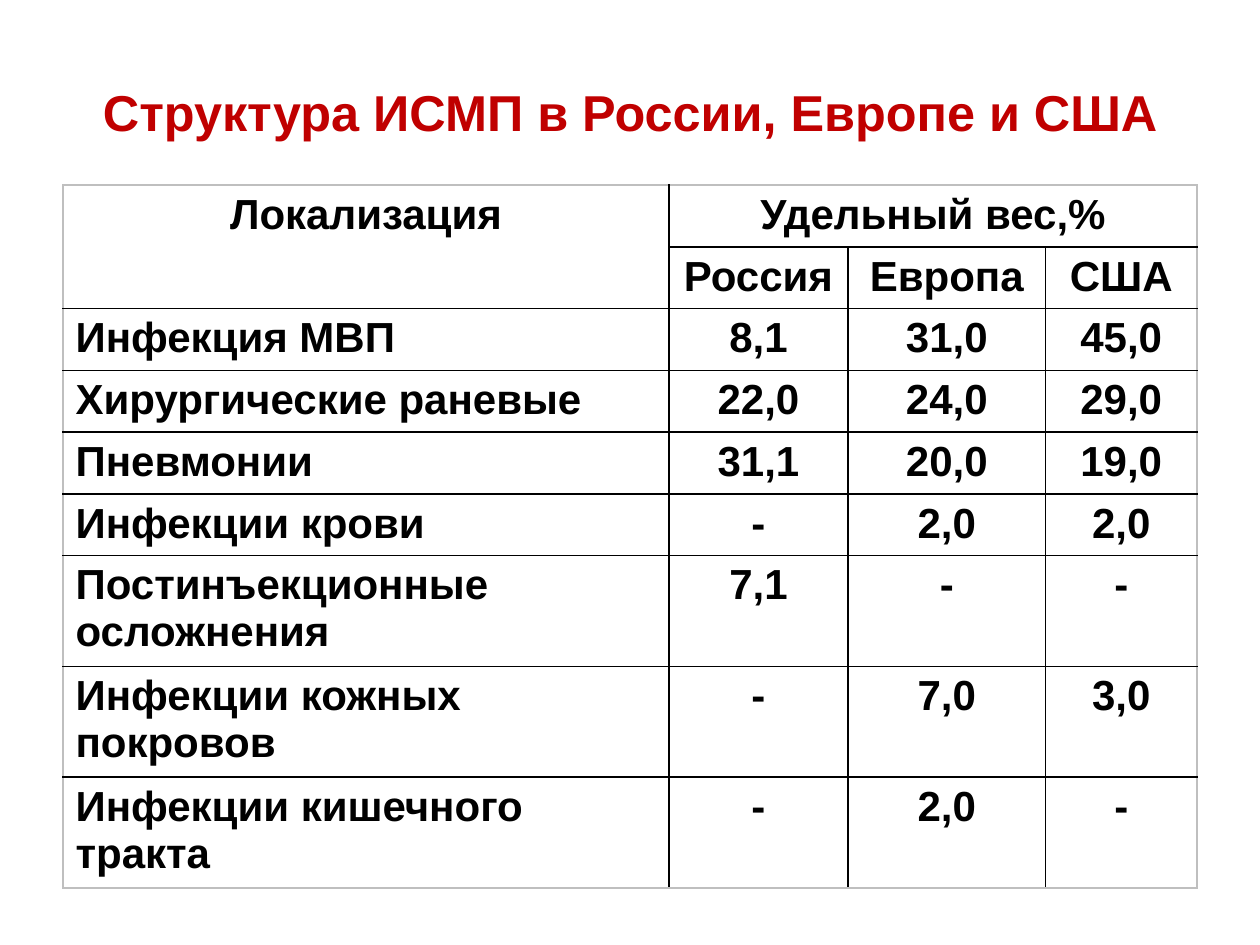
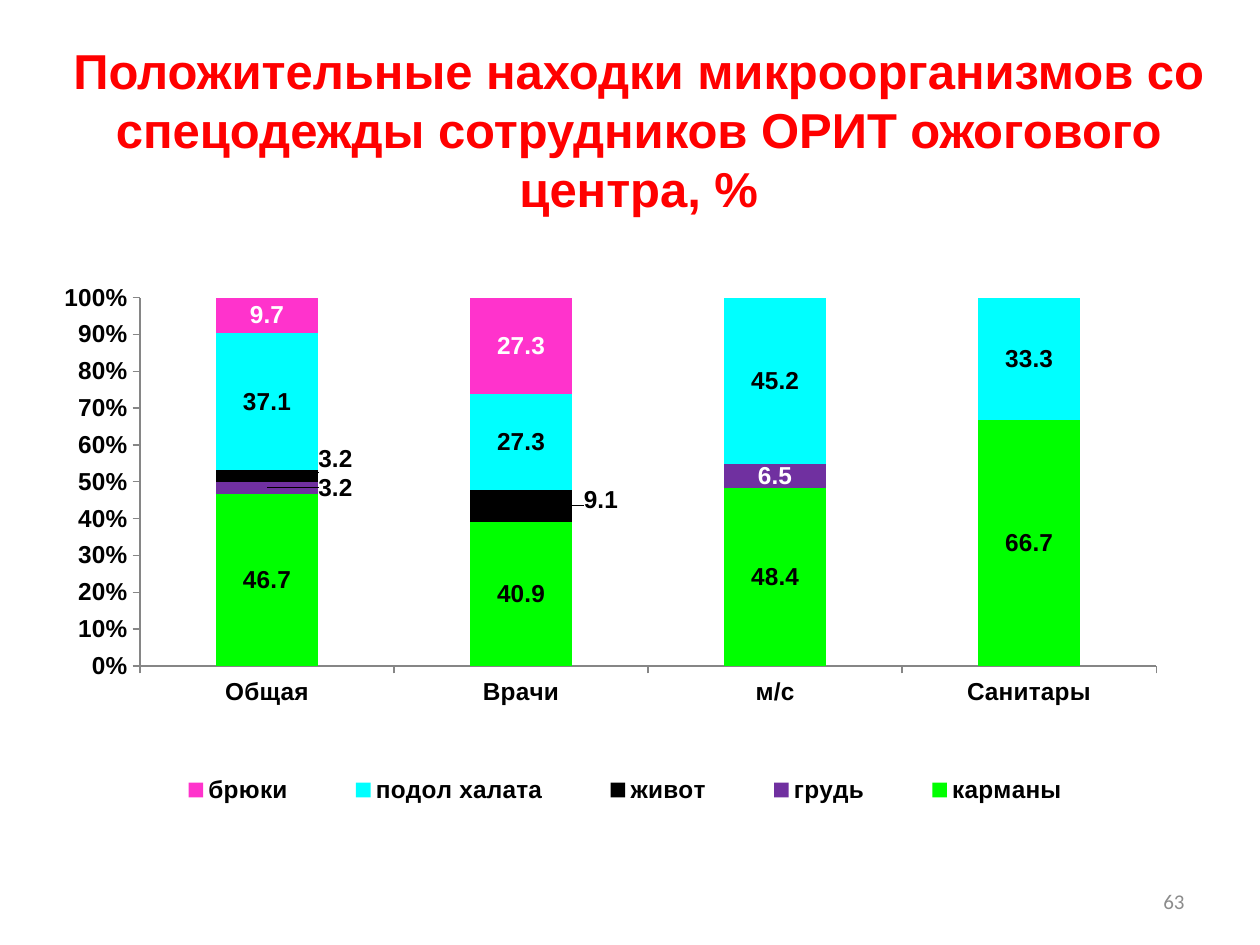
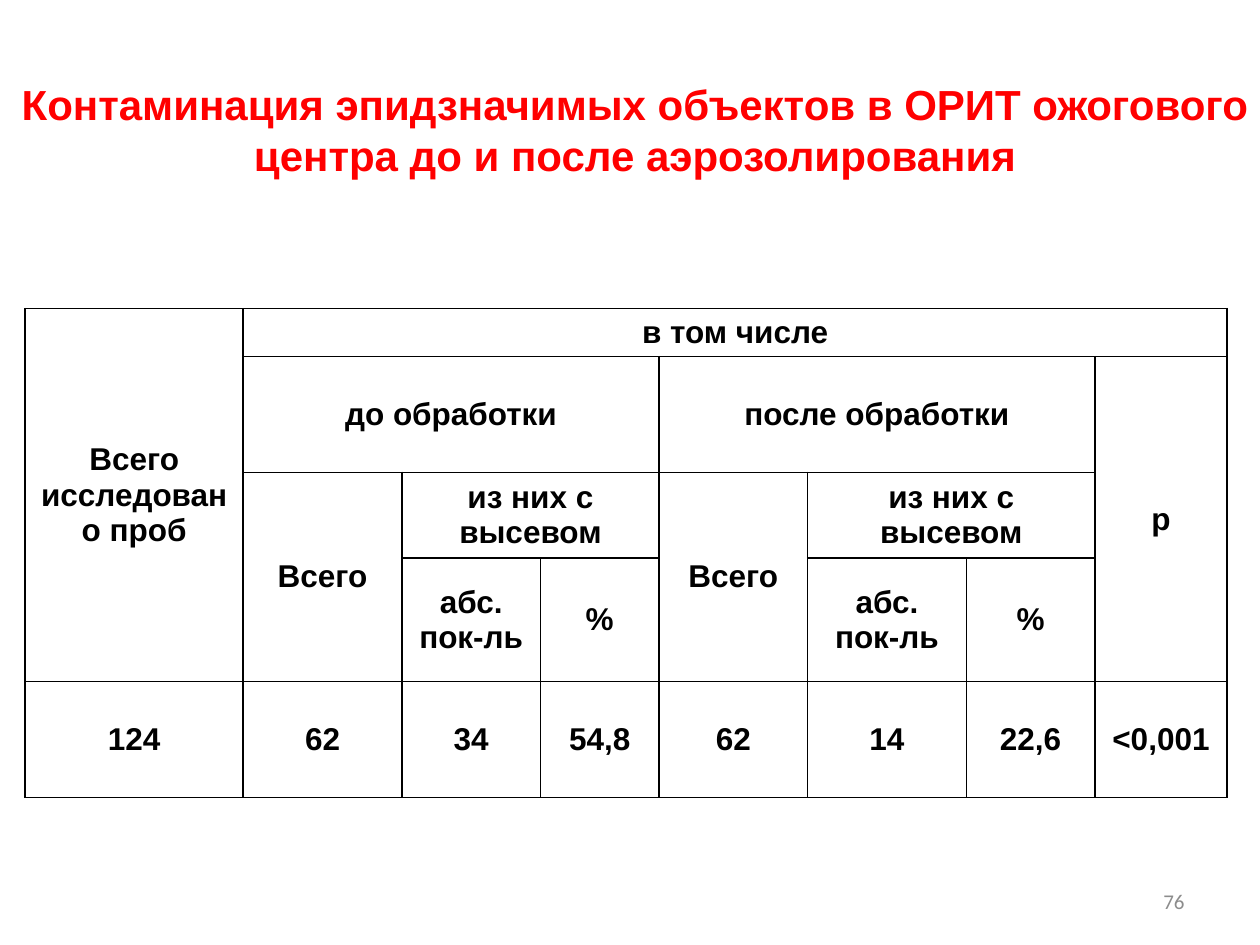
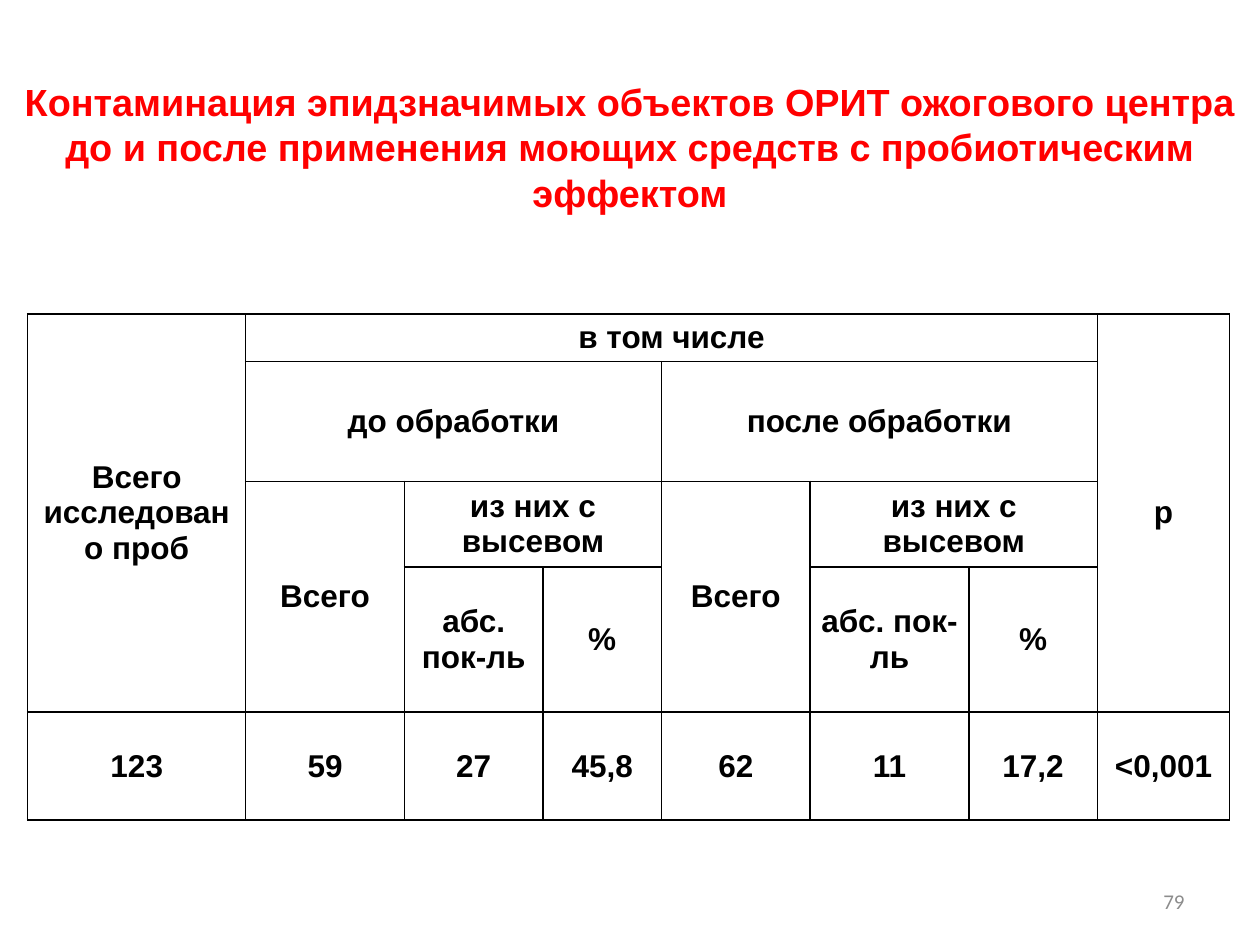
from pptx import Presentation
from pptx.chart.data import CategoryChartData
from pptx.dml.color import RGBColor
from pptx.enum.chart import XL_CHART_TYPE as CT, XL_LEGEND_POSITION as LP, XL_TICK_MARK as TM
from pptx.enum.text import MSO_ANCHOR as ANCHOR, MSO_AUTO_SIZE as FIT, PP_ALIGN as AL
from pptx.oxml import parse_xml
from pptx.oxml.ns import nsdecls, qn
from pptx.util import Inches, Pt

FONT = "Arial"
BLACK, WHITE, RED, DARK_RED = "000000", "FFFFFF", "FF0000", "C00000"
GREY, AXIS, OUTLINE = "8C8C8C", "868686", "BFBFBF"
rgb = RGBColor.from_string


def chart_layout(x, y, w=None, h=None, edge=False, inner=False):
    """Manual layout in fractions of the chart; without edge, x and y are offsets."""
    parts = [("layoutTarget", "inner")] if inner else []
    parts += [("xMode", "edge"), ("yMode", "edge")] if edge else []
    parts += [("x", x), ("y", y)]
    parts += [("w", w), ("h", h)] if w else []
    inside = "".join(f'<c:{tag} val="{value}"/>' for tag, value in parts)
    return parse_xml(f'<c:layout {nsdecls("c")}><c:manualLayout>{inside}</c:manualLayout></c:layout>')


def add_grid(s, left, top, widths, heights, rows, spans, size, outline=BLACK):
    """Bordered table; spans holds (row, column, last row, last column)."""
    shape = s.shapes.add_table(len(heights), len(widths), Inches(left), Inches(top),
                               Inches(sum(widths)), Inches(sum(heights)))
    table = shape.table
    table.first_row = table.horz_banding = False
    for column, width in zip(table.columns, widths):
        column.width = Inches(width)
    for row, height in zip(table.rows, heights):
        row.height = Inches(height)
    for r1, c1, r2, c2 in spans:
        table.cell(r1, c1).merge(table.cell(r2, c2))
    for r, row in enumerate(rows):
        for c, text in enumerate(row):
            cell = table.cell(r, c)
            cell.fill.solid()
            cell.fill.fore_color.rgb = rgb(WHITE)
            at_edge = {"L": c == 0, "R": c + cell.span_width == len(widths),
                       "T": r == 0, "B": r + cell.span_height == len(heights)}
            for i, (side, outer) in enumerate(at_edge.items()):
                color = outline if outer else BLACK
                cell._tc.get_or_add_tcPr().insert(i, parse_xml(
                    f'<a:ln{side} {nsdecls("a")} w="12700"><a:solidFill>'
                    f'<a:srgbClr val="{color}"/></a:solidFill></a:ln{side}>'))
            if text is None:
                continue
            cell.text = text
            p = cell.text_frame.paragraphs[0]
            p.alignment = AL.CENTER
            p.font.name, p.font.size, p.font.bold = FONT, Pt(size), True
            p.font.color.rgb = rgb(BLACK)
    return table


prs = Presentation()
prs.slide_width, prs.slide_height = Inches(10), Inches(7.5)

# Titles and slide numbers
headings = [
    ("Структура ИСМП в России, Европе и США",
     28.8, DARK_RED, (0.28, 0.3, 9.45, 1.17), None),
    ("Положительные находки микроорганизмов со спецодежды сотрудников ОРИТ ожогового центра, %",
     28, RED, (0.08, 0.76, 9.98, 0.53), "63"),
    ("Контаминация эпидзначимых объектов в ОРИТ ожогового центра до и после аэрозолирования",
     24, RED, (0.04, 0.52, 10, 1.01), "76"),
    ("Контаминация эпидзначимых объектов ОРИТ ожогового центра до и после применения "
     "моющих средств с пробиотическим эффектом",
     21.6, RED, (0, 0.6, 10, 1.13), "79"),
]
for text, size, color, box, number in headings:
    s = prs.slides.add_slide(prs.slide_layouts[5])
    title = s.shapes.title
    title.left, title.top, title.width, title.height = map(Inches, box)
    tf = title.text_frame
    tf.text = text
    tf.auto_size, tf.word_wrap, tf.vertical_anchor = FIT.NONE, True, ANCHOR.MIDDLE
    p = tf.paragraphs[0]
    p.alignment = AL.CENTER
    p.font.name, p.font.size, p.font.bold = FONT, Pt(size), True
    p.font.color.rgb = rgb(color)
    if number:
        tf = s.shapes.add_textbox(Inches(7.17), Inches(6.95), Inches(2.33), Inches(0.4)).text_frame
        tf.text = number
        tf.word_wrap, tf.vertical_anchor = True, ANCHOR.MIDDLE
        p = tf.paragraphs[0]
        p.alignment = AL.RIGHT
        p.font.name, p.font.size = "Calibri", Pt(12)
        p.font.color.rgb = rgb(GREY)
structure, clothing, aerosol, probiotic = prs.slides

# Slide 1: structure by region
rows = [
    ["Локализация", "Удельный вес,%", None, None],
    [None, "Россия", "Европа", "США"],
    ["Инфекция МВП", "8,1", "31,0", "45,0"],
    ["Хирургические раневые", "22,0", "24,0", "29,0"],
    ["Пневмонии", "31,1", "20,0", "19,0"],
    ["Инфекции крови", "-", "2,0", "2,0"],
    ["Постинъекционные осложнения", "7,1", "-", "-"],
    ["Инфекции кожных покровов", "-", "7,0", "3,0"],
    ["Инфекции кишечного тракта", "-", "2,0", "-"],
]
table = add_grid(structure, 0.5, 1.47, [4.81, 1.42, 1.57, 1.2], [0.49] * 6 + [0.88] * 3,
                 rows, [(0, 0, 1, 0), (0, 1, 0, 3)], 24, OUTLINE)
for r in range(2, len(rows)):
    table.cell(r, 0).text_frame.paragraphs[0].alignment = AL.LEFT

# Slide 2: findings on clothing
findings = [
    ("карманы", (46.7, 40.9, 48.4, 66.7), "00FF00", BLACK),
    ("грудь", (3.2, 0, 6.5, 0), "7030A0", BLACK),
    ("живот", (3.2, 9.1, 0, 0), BLACK, BLACK),
    ("подол халата", (37.1, 27.3, 45.2, 33.3), "00FFFF", BLACK),
    ("брюки", (9.7, 27.3, 0, 0), "FF33CC", WHITE),
]
data = CategoryChartData()
data.categories = ["Общая", "Врачи", "м/с", "Санитары"]
for name, values, *_ in findings:
    data.add_series(name, values)
chart = clothing.shapes.add_chart(CT.COLUMN_STACKED_100, Inches(0.51), Inches(2.18),
                                  Inches(9.12), Inches(4.57), data).chart
chart.has_title = False
chart.font.name, chart.font.size, chart.font.bold = FONT, Pt(14), True
chart.font.color.rgb = rgb(BLACK)
plot = chart.plots[0]
plot.gap_width, plot.overlap, plot.vary_by_categories = 150, 100, False
plot_area = chart._chartSpace.chart.plotArea
for old in plot_area.findall(qn("c:layout")):
    plot_area.remove(old)
plot_area.insert(0, chart_layout(0.06, 0.04, 0.89, 0.64, edge=True, inner=True))

for axis in (chart.category_axis, chart.value_axis):
    axis.has_major_gridlines = False
    axis.major_tick_mark, axis.minor_tick_mark = TM.OUTSIDE, TM.NONE
    axis.format.line.color.rgb = rgb(AXIS)
chart.value_axis.maximum_scale, chart.value_axis.major_unit = 1, 0.1
chart.value_axis.tick_labels.number_format = "0%"
chart.value_axis.tick_labels.number_format_is_linked = False

for series, (_, _, color, label_color) in zip(plot.series, findings):
    series.format.fill.solid()
    series.format.fill.fore_color.rgb = rgb(color)
    labels = series.data_labels
    labels.show_value = True
    labels.number_format, labels.number_format_is_linked = "0.0;;", False  # zeros stay unlabelled
    labels.font.name, labels.font.size, labels.font.bold = FONT, Pt(14), True
    labels.font.color.rgb = rgb(label_color)

# Labels of thin segments: series, category, colour, offset
for series_no, point_no, color, dx, dy in [(1, 0, BLACK, 0.06, 0), (1, 2, WHITE, 0, 0),
                                           (2, 0, BLACK, 0.06, -0.03), (2, 1, BLACK, 0.07, -0.01)]:
    series = plot.series[series_no]
    font = series.points[point_no].data_label.font
    font.name, font.size, font.bold = FONT, Pt(14), True
    font.color.rgb = rgb(color)
    if dx:
        label = series.data_labels._element.findall(qn("c:dLbl"))[-1]
        label.insert(1, chart_layout(dx, dy))

chart.has_legend = True
legend = chart.legend
legend.position, legend.include_in_layout = LP.RIGHT, False
for old in legend._element.findall(qn("c:layout")):
    legend._element.remove(old)
legend._element.find(qn("c:legendPos")).addnext(chart_layout(0.05, 0.86, 0.87, 0.07, edge=True))

# Slides 3 and 4: contamination before and after treatment
widths = [1.73, 1.26, 1.1, 0.94, 1.18, 1.26, 1.02, 1.05]
shared_spans = [(0, 0, 3, 0), (1, 1, 1, 3), (1, 4, 1, 6),
                (2, 1, 3, 1), (2, 2, 2, 3), (2, 4, 3, 4), (2, 5, 2, 6)]
tests = [
    (aerosol, 0.2, 2.45, [0.36, 0.92, 0.63, 0.91, 0.92], 1,
     ["124", "62", "34", "54,8", "62", "14", "22,6", "<0,001"]),
    (probiotic, 0.22, 2.49, [0.37, 0.95, 0.63, 1.15, 0.86], 0,
     ["123", "59", "27", "45,8", "62", "11", "17,2", "<0,001"]),
]
for s, left, top, heights, p_row, results in tests:
    rows = [
        ["Всего исследовано проб", "в том числе"] + [None] * 6,
        [None, "до обработки", None, None, "после обработки", None, None, None],
        [None] + ["Всего", "из них с высевом", None] * 2 + [None],
        [None] + [None, "абс. пок-ль", "%"] * 2 + [None],
        results,
    ]
    rows[p_row][7] = "р"
    spans = shared_spans + [(0, 1, 0, 6 + p_row), (p_row, 7, 3, 7)]
    table = add_grid(s, left, top, widths, heights, rows, spans, 18)
    for r in range(len(rows)):
        tight = s is probiotic and r > 2
        for c in range(len(widths)):
            cell = table.cell(r, c)
            cell.vertical_anchor = ANCHOR.MIDDLE
            cell.margin_left = cell.margin_right = Inches(0.07 if tight else 0.1)
            cell.margin_top = cell.margin_bottom = Inches(0 if tight else 0.04)

prs.save("out.pptx")
